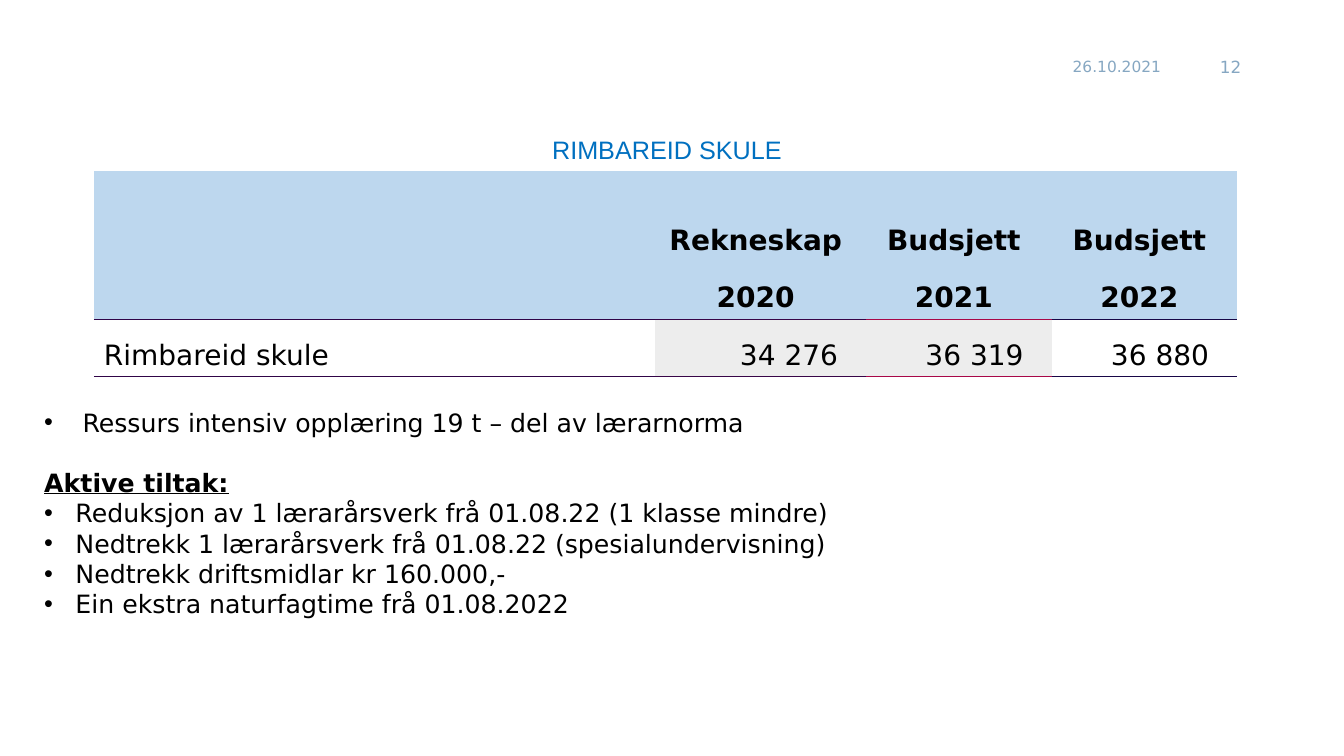
from lxml import etree
from pptx import Presentation
from pptx.dml.color import RGBColor
from pptx.enum import text
from pptx.oxml import ns
from pptx.util import Inches, Pt

BODY_FONT = "DejaVu Sans"
MUTED, BLUE, BLACK = "86A7C2", "0070C0", "000000"
HEADER_FILL, PAST_FILL = "BDD7EE", "EDEDED"
LEFT, CENTER, RIGHT = text.PP_ALIGN.LEFT, text.PP_ALIGN.CENTER, text.PP_ALIGN.RIGHT


def color(value):
    return RGBColor.from_string(value)


def write(paragraph, words, size=18, font=BODY_FONT, ink=BLACK, bold=False,
          underline=False, align=LEFT, indent=None, before=0):
    paragraph.alignment = align
    paragraph.space_before = Pt(before)
    if indent:
        properties = paragraph._p.get_or_add_pPr()
        properties.set("marL", str(Inches(indent)))
        properties.set("indent", str(-Inches(indent)))
        etree.SubElement(properties, ns.qn("a:buFont")).set("typeface", "Arial")
        etree.SubElement(properties, ns.qn("a:buChar")).set("char", "•")
    run = paragraph.add_run()
    run.text = words
    run.font.name = font
    run.font.size = Pt(size)
    run.font.bold = bold
    run.font.underline = underline
    run.font.color.rgb = color(ink)


presentation = Presentation()
presentation.slide_width = Inches(13.33)
presentation.slide_height = Inches(7.5)
slide = presentation.slides.add_slide(presentation.slide_layouts[6])

# Date, slide number, title and measures
text_boxes = [
    ((10.54, 0.46, 1.15, 0.4), text.MSO_ANCHOR.MIDDLE,
     [("26.10.2021", dict(size=11, ink=MUTED))]),
    ((11.84, 0.46, 0.57, 0.4), text.MSO_ANCHOR.MIDDLE,
     [("12", dict(size=12, ink=MUTED, align=RIGHT))]),
    ((0.34, 1.28, 12.55, 0.4), text.MSO_ANCHOR.TOP,
     [("RIMBAREID SKULE", dict(font="Arial", ink=BLUE, align=CENTER))]),
    ((0.34, 3.99, 12.55, 2.54), text.MSO_ANCHOR.TOP,
     [("Ressurs intensiv opplæring 19 t – del av lærarnorma", dict(indent=0.38)),
      ("Aktive tiltak:", dict(bold=True, underline=True, before=21.5)),
      ("Reduksjon av 1 lærarårsverk frå 01.08.22 (1 klasse mindre)", dict(indent=0.31)),
      ("Nedtrekk 1 lærarårsverk frå 01.08.22 (spesialundervisning)", dict(indent=0.31)),
      ("Nedtrekk driftsmidlar kr 160.000,-", dict(indent=0.31)),
      ("Ein ekstra naturfagtime frå 01.08.2022", dict(indent=0.31))]),
]
for place, anchor, lines in text_boxes:
    frame = slide.shapes.add_textbox(*map(Inches, place)).text_frame
    frame.word_wrap = True
    frame.vertical_anchor = anchor
    for number, (words, style) in enumerate(lines):
        paragraph = frame.add_paragraph() if number else frame.paragraphs[0]
        write(paragraph, words, **style)

# Budget table
rows = [
    ["", "Rekneskap ", "Budsjett ", "Budsjett "],
    ["", "2020 ", "2021 ", "2022 "],
    ["Rimbareid skule ", "34 276  ", "36 319  ", "36 880  "],
]
column_widths = [5.57, 2.09, 1.84, 1.84]
row_heights = [0.9, 0.57, 0.57]
rule_colors = ["300447", "380547", "A80747", "180747"]
rules_by_row = [[], ["lnB"], ["lnT", "lnB"]]

frame = slide.shapes.add_table(3, 4, Inches(0.93), Inches(1.7), Inches(11.34), Inches(2.04))
table = frame.table
table.first_row = table.horz_banding = False
# "No style, no grid" leaves only the rules set below
style_id = table._tbl.tblPr.find(ns.qn("a:tableStyleId"))
style_id.text = "{2D5ABB26-0587-4C30-8999-92F81FD0307C}"
for column, width in zip(table.columns, column_widths):
    column.width = Inches(width)
for row, height in zip(table.rows, row_heights):
    row.height = Inches(height)

for row_number, row in enumerate(rows):
    is_header = row_number < 2
    for column_number, words in enumerate(row):
        cell = table.cell(row_number, column_number)
        cell.vertical_anchor = text.MSO_ANCHOR.BOTTOM

        # Horizontal rules come before the fill in the cell properties
        cell_properties = cell._tc.get_or_add_tcPr()
        for side in rules_by_row[row_number]:
            line = etree.SubElement(cell_properties, ns.qn("a:" + side), w=str(Pt(0.75)))
            solid = etree.SubElement(line, ns.qn("a:solidFill"))
            etree.SubElement(solid, ns.qn("a:srgbClr"), val=rule_colors[column_number])

        if is_header or column_number in (1, 2):
            cell.fill.solid()
            cell.fill.fore_color.rgb = color(HEADER_FILL if is_header else PAST_FILL)
        else:
            cell.fill.background()

        if words:
            align = CENTER if is_header else RIGHT if column_number else LEFT
            write(cell.text_frame.paragraphs[0], words, size=20, bold=is_header, align=align)

presentation.save("out.pptx")
